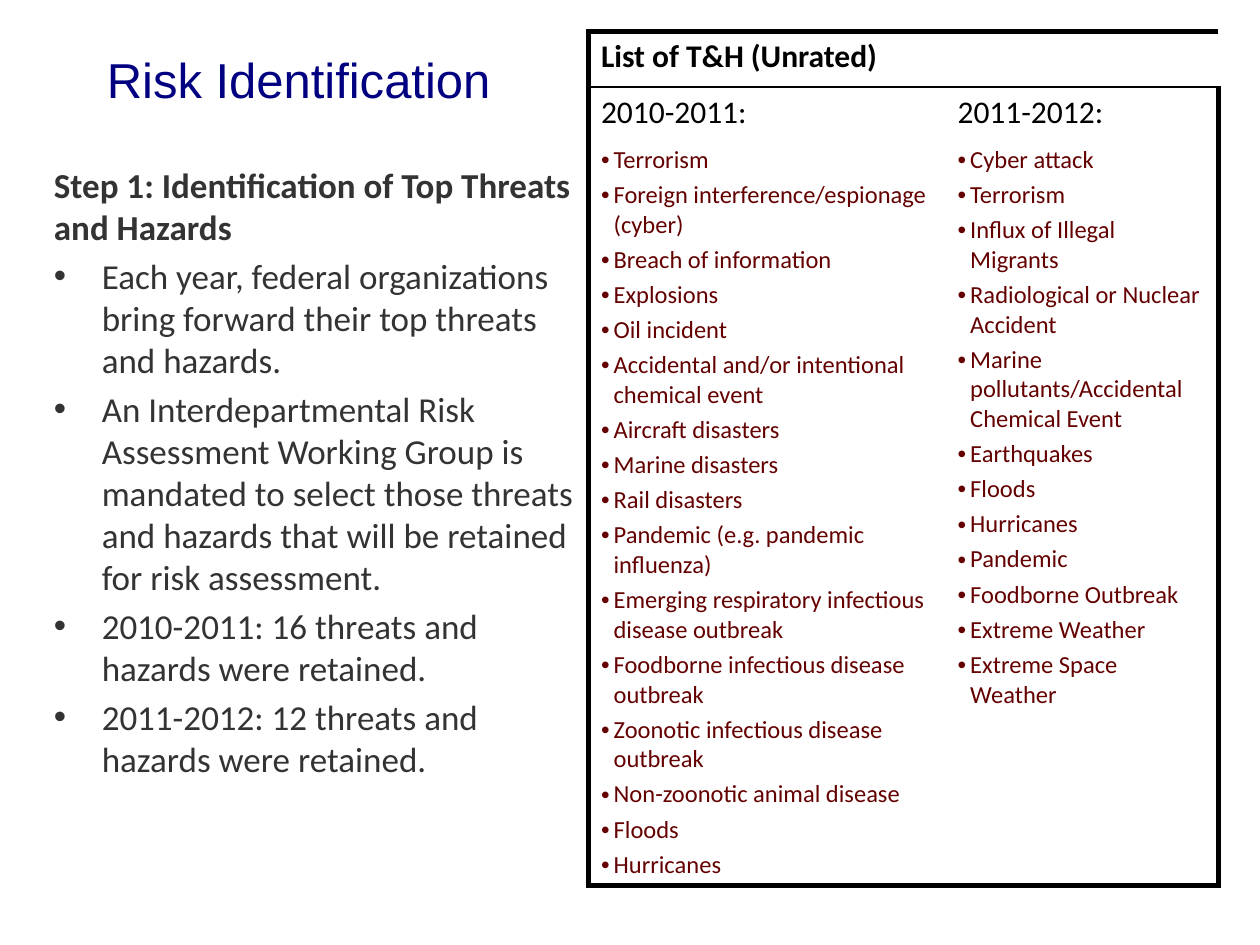
from lxml import etree
from pptx import Presentation
from pptx import util as u
from pptx.dml.color import RGBColor
from pptx.enum import text
from pptx.oxml.ns import qn

HUES = {"title": "000080", "body": "333333", "head": "000000",
        "item": "640000", "line": "000000", "fill": "FFFFFF"}
TITLE = "Risk Identification"
STEP = "Step 1: Identification of Top Threats and Hazards"
POINTS = [
    "Each year, federal organizations bring forward their top threats and hazards.",
    "An Interdepartmental Risk Assessment Working Group is mandated to select "
    "those threats and hazards that will be retained for risk assessment.",
    "2010-2011: 16 threats and hazards were retained.",
    "2011-2012: 12 threats and hazards were retained.",
]
HEAD = "List of T&H (Unrated)"
YEARS = {
    "2010-2011:": [
        "Terrorism", "Foreign interference/espionage (cyber)",
        "Breach of information", "Explosions", "Oil incident",
        "Accidental and/or intentional chemical event", "Aircraft disasters",
        "Marine disasters", "Rail disasters",
        "Pandemic (e.g. pandemic influenza)",
        "Emerging respiratory infectious disease outbreak",
        "Foodborne infectious disease outbreak",
        "Zoonotic infectious disease outbreak",
        "Non-zoonotic animal disease", "Floods", "Hurricanes"],
    "2011-2012:": [
        "Cyber attack", "Terrorism", "Influx of Illegal Migrants",
        "Radiological or Nuclear Accident",
        "Marine pollutants/Accidental Chemical Event", "Earthquakes",
        "Floods", "Hurricanes", "Pandemic", "Foodborne Outbreak",
        "Extreme Weather", "Extreme Space Weather"],
}
WIDTHS = [2.83, 2.17]
HEIGHTS = [0.44, 0.41, 5.93]


def write(frame, lines, size, hue, font="Calibri", bold=False, indent=0,
          before=0, after=0, more=False):
    for i, line in enumerate(lines):
        fresh = more or i > 0
        para = frame.add_paragraph() if fresh else frame.paragraphs[0]
        if indent:
            props = para._p.get_or_add_pPr()
            props.set("marL", str(u.Inches(indent)))
            props.set("indent", str(-u.Inches(indent)))
            etree.SubElement(props, qn("a:buFont"), typeface="Arial")
            etree.SubElement(props, qn("a:buChar"), char="•")
        para.space_before = u.Pt(before if fresh else 0)
        para.space_after = u.Pt(after)
        run = para.add_run()
        run.text = line
        run.font.size = u.Pt(size)
        run.font.name = font
        run.font.bold = bold
        run.font.color.rgb = RGBColor.from_string(HUES[hue])


def box(slide, left, top, wide, high):
    frame = slide.shapes.add_textbox(
        *map(u.Inches, (left, top, wide, high))).text_frame
    frame.word_wrap = True
    return frame


def edge(cell, sides):
    props = cell._tc.get_or_add_tcPr()
    for i, (side, width) in enumerate(sides.items()):
        line = etree.Element(qn("a:ln" + side), w=str(u.Pt(width)))
        if width:
            fill = etree.SubElement(line, qn("a:solidFill"))
            etree.SubElement(fill, qn("a:srgbClr"), val=HUES["line"])
        else:
            etree.SubElement(line, qn("a:noFill"))
        props.insert(i, line)


def threats(slide):
    shape = slide.shapes.add_table(
        len(HEIGHTS), len(WIDTHS), u.Inches(4.67), u.Inches(0.25),
        u.Inches(sum(WIDTHS)), u.Inches(sum(HEIGHTS)))
    table = shape.table
    for col, wide in zip(table.columns, WIDTHS):
        col.width = u.Inches(wide)
    for row, high in zip(table.rows, HEIGHTS):
        row.height = u.Inches(high)
    table.cell(0, 0).merge(table.cell(0, 1))
    write(table.cell(0, 0).text_frame, [HEAD], 18, "head", bold=True)
    for c, (year, items) in enumerate(YEARS.items()):
        write(table.cell(1, c).text_frame, [year], 18, "head")
        write(table.cell(2, c).text_frame, items, 14, "item",
              indent=0.1, after=3)
        for r in range(len(HEIGHTS)):
            cell = table.cell(r, c)
            cell.fill.solid()
            cell.fill.fore_color.rgb = RGBColor.from_string(HUES["fill"])
            edge(cell, {"L": 0 if c else 3, "R": 3 if c else 0,
                        "T": (3, 1, 0)[r], "B": (1, 0, 3)[r]})


def main():
    deck = Presentation()
    deck.slide_width, deck.slide_height = u.Inches(10), u.Inches(7.5)
    slide = deck.slides.add_slide(deck.slide_layouts[6])
    title = box(slide, 0.75, 0, 8.5, 1.25)
    title.vertical_anchor = text.MSO_ANCHOR.MIDDLE
    write(title, [TITLE], 28, "title", font="Arial")
    body = box(slide, 0.33, 1.25, 4.34, 4.17)
    write(body, [STEP], 20, "body", bold=True)
    write(body, POINTS, 20, "body", indent=0.38, before=4, more=True)
    threats(slide)
    deck.save("out.pptx")


if __name__ == "__main__":
    main()
